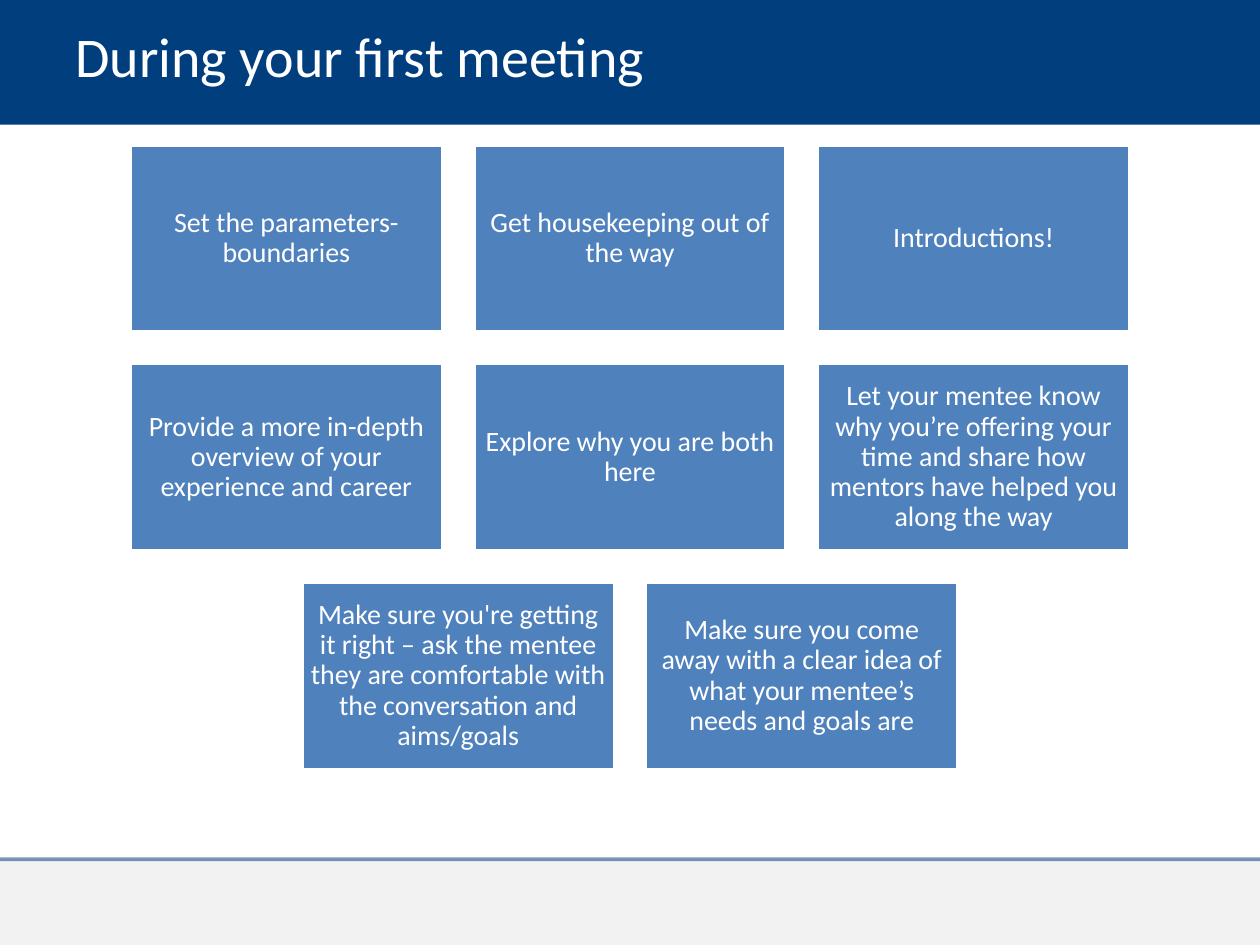
from dataclasses import dataclass

from pptx import Presentation
from pptx.dml.color import RGBColor
from pptx.enum.shapes import MSO_CONNECTOR, MSO_SHAPE
from pptx.enum.text import MSO_ANCHOR, PP_ALIGN
from pptx.oxml.xmlchemy import OxmlElement
from pptx.slide import Slide
from pptx.util import Pt

WIDTH, HEIGHT = 720, 540
FOOTER_TOP = 491
CARD_WIDTH, CARD_HEIGHT, GAP = 178.5, 107.1, 17.85
CARDS_TOP = 82.8
STEP_ROWS = [
    [
        "Set the parameters- boundaries",
        "Get housekeeping out of the way",
        "Introductions!",
    ],
    [
        "Provide a more in-depth overview of your experience and career",
        "Explore why you are both here",
        "Let your mentee know why you’re offering your time and share how "
        "mentors have helped you along the way",
    ],
    [
        "Make sure you're getting it right – ask the mentee they are "
        "comfortable with the conversation and aims/goals",
        "Make sure you come away with a clear idea of what your mentee’s "
        "needs and goals are",
    ],
]


def rgb(color):
    return RGBColor.from_string(color)


def set_opacity(shape, percent):
    alpha = OxmlElement("a:alpha")
    alpha.set("val", str(percent * 1000))
    shape._element.spPr.find(".//{*}srgbClr").append(alpha)


@dataclass
class Deck:
    slide: Slide
    font: str = "Calibri"
    navy: str = "003E7E"
    blue: str = "4F81BD"
    gray: str = "808080"
    white: str = "FFFFFF"

    def band(self, left, top, width, height, color):
        band = self.slide.shapes.add_shape(
            MSO_SHAPE.RECTANGLE, Pt(left), Pt(top), Pt(width), Pt(height)
        )
        band.shadow.inherit = False
        band.fill.solid()
        band.fill.fore_color.rgb = rgb(color)
        band.line.fill.background()
        return band

    def rule(self, top, color):
        rule = self.slide.shapes.add_connector(
            MSO_CONNECTOR.STRAIGHT, Pt(0), Pt(top), Pt(WIDTH), Pt(top)
        )
        rule.line.width = Pt(2.25)
        rule.line.color.rgb = rgb(color)
        rule._element.spPr.append(OxmlElement("a:effectLst"))
        return rule

    def set_text(self, frame, text, size, align):
        frame.word_wrap = True
        frame.vertical_anchor = MSO_ANCHOR.MIDDLE
        paragraph = frame.paragraphs[0]
        paragraph.text = text
        paragraph.alignment = align
        paragraph.line_spacing = 0.9
        paragraph.font.name = self.font
        paragraph.font.size = Pt(size)
        paragraph.font.color.rgb = rgb(self.white)

    def title(self, text):
        title = self.slide.shapes.add_textbox(Pt(36), Pt(9), Pt(500), Pt(50))
        self.set_text(title.text_frame, text, 32, PP_ALIGN.LEFT)

    def card(self, left, top, text):
        card = self.band(left, top, CARD_WIDTH, CARD_HEIGHT, self.blue)
        card.line.width = Pt(2)
        card.line.color.rgb = rgb(self.white)
        frame = card.text_frame
        frame.margin_left = frame.margin_right = Pt(5)
        frame.margin_top = frame.margin_bottom = Pt(5)
        self.set_text(frame, text, 16, PP_ALIGN.CENTER)


def main():
    presentation = Presentation()
    presentation.slide_width, presentation.slide_height = Pt(WIDTH), Pt(HEIGHT)
    deck = Deck(presentation.slides.add_slide(presentation.slide_layouts[6]))

    deck.band(0, 0, WIDTH, 71.3, deck.navy)
    footer = deck.band(0, FOOTER_TOP, WIDTH, HEIGHT - FOOTER_TOP, deck.gray)
    set_opacity(footer, 10)
    set_opacity(deck.rule(FOOTER_TOP, deck.navy), 52)
    deck.title("During your first meeting")

    for row, steps in enumerate(STEP_ROWS):
        row_width = len(steps) * (CARD_WIDTH + GAP) - GAP
        row_left = (WIDTH - row_width) / 2
        top = CARDS_TOP + row * (CARD_HEIGHT + GAP)
        for column, step in enumerate(steps):
            deck.card(row_left + column * (CARD_WIDTH + GAP), top, step)

    presentation.save("out.pptx")


if __name__ == "__main__":
    main()
